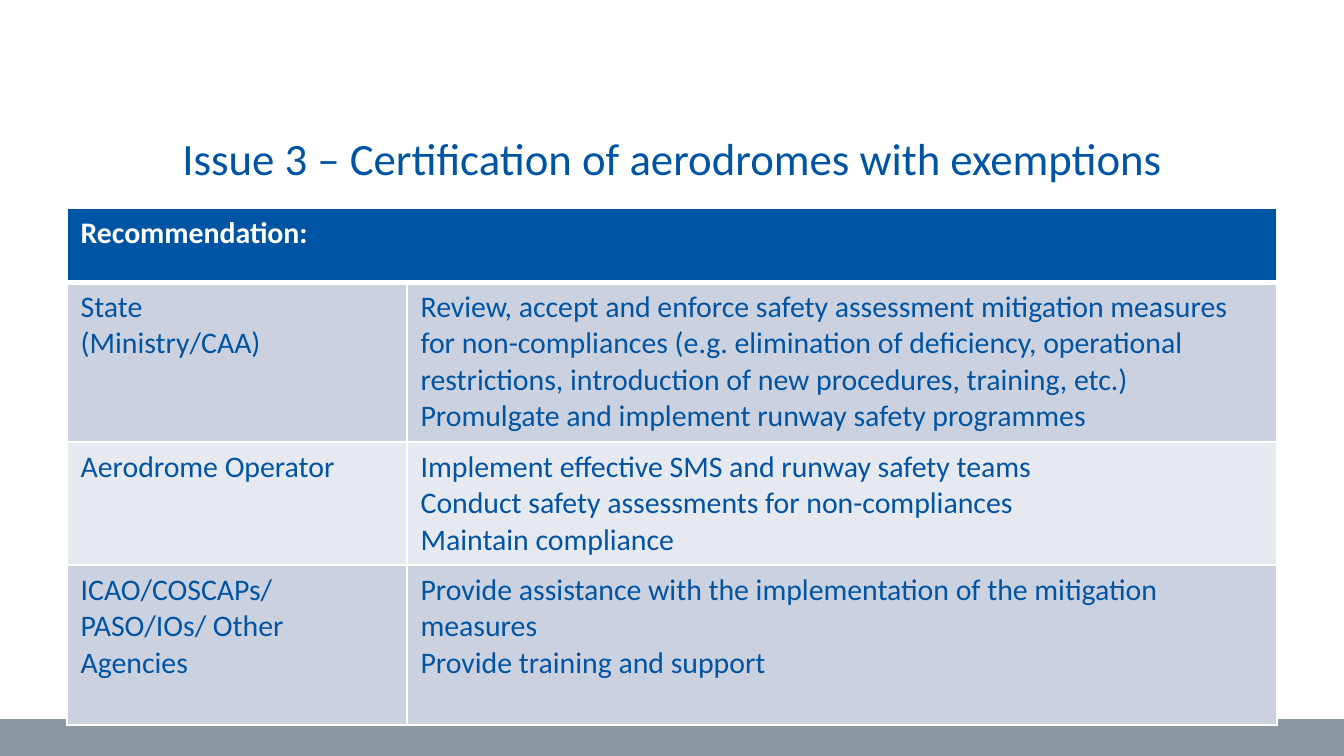
from lxml.etree import SubElement
from pptx import Presentation
from pptx.dml.color import RGBColor
from pptx.enum.shapes import MSO_SHAPE
from pptx.enum.text import MSO_ANCHOR, PP_ALIGN
from pptx.oxml.ns import qn
from pptx.util import Inches, Pt

BLUE = RGBColor(0x00, 0x54, 0xA4)
WHITE = RGBColor(0xFF, 0xFF, 0xFF)
GRAY = RGBColor(0x8C, 0x99, 0xA1)
BANDS = [RGBColor(0xCC, 0xD1, 0xE0), RGBColor(0xE7, 0xE9, 0xF0)]

TITLE = "Issue 3 – Certification of aerodromes with exemptions"
HEADER = "Recommendation:"
RECOMMENDATIONS = [
    (["State", "(Ministry/CAA)"],
     ["Review, accept and enforce safety assessment mitigation measures for "
      "non-compliances (e.g. elimination of deficiency, operational restrictions, "
      "introduction of new procedures, training, etc.)",
      "Promulgate and implement runway safety programmes"]),
    (["Aerodrome Operator"],
     ["Implement effective SMS and runway safety teams",
      "Conduct safety assessments for non-compliances",
      "Maintain compliance"]),
    (["ICAO/COSCAPs/ PASO/IOs/ Other Agencies"],
     ["Provide assistance with the implementation of the mitigation measures",
      "Provide training and support"]),
]
COLUMN_WIDTHS = [2.53, 6.47]
ROW_HEIGHTS = [0.55, 1.19, 0.91, 1.19]
TITLE_FONT = {"name": "Calibri", "size": Pt(24), "bold": False}
HEADER_FONT = {"name": "Calibri", "size": Pt(16), "bold": True}
BODY_FONT = {**HEADER_FONT, "bold": False}


def format_font(font, values, color):
    for name, value in values.items():
        setattr(font, name, value)
    font.color.rgb = color


def add_borders(cell, bottom=1, top=1):
    """Draw white cell borders; widths are in points."""
    properties = cell._tc.get_or_add_tcPr()
    for side, width in {"L": 1, "R": 1, "T": top, "B": bottom}.items():
        line = SubElement(properties, qn(f"a:ln{side}"), w=str(Pt(width)))
        fill = SubElement(line, qn("a:solidFill"))
        SubElement(fill, qn("a:srgbClr"), val=str(WHITE))


def fill_cell(cell, lines, values, color, background):
    cell.fill.solid()
    cell.fill.fore_color.rgb = background
    cell.text = "\n".join(lines)
    for paragraph in cell.text_frame.paragraphs:
        format_font(paragraph.font, values, color)


presentation = Presentation()
presentation.slide_width = Inches(10)
presentation.slide_height = presentation.slide_width * 9 // 16
slide = presentation.slides.add_slide(presentation.slide_layouts[5])

title = slide.shapes.title
title.left, title.top = Inches(0.5), Inches(0.92)
title.width, title.height = Inches(9), Inches(0.47)
frame = title.text_frame
frame.text = TITLE
frame.vertical_anchor = MSO_ANCHOR.TOP
frame.margin_top = Inches(0.05)
frame.paragraphs[0].alignment = PP_ALIGN.CENTER
format_font(frame.paragraphs[0].font, TITLE_FONT, BLUE)

bar_top = Inches(5.35)
footer_bar = slide.shapes.add_shape(
    MSO_SHAPE.RECTANGLE, 0, bar_top,
    presentation.slide_width, presentation.slide_height - bar_top)
footer_bar.shadow.inherit = False
footer_bar.fill.solid()
footer_bar.fill.fore_color.rgb = GRAY
footer_bar.line.fill.background()
title._element.addprevious(footer_bar._element)

table = slide.shapes.add_table(
    len(ROW_HEIGHTS), len(COLUMN_WIDTHS), Inches(0.5), Inches(1.55),
    Inches(sum(COLUMN_WIDTHS)), Inches(sum(ROW_HEIGHTS))).table
for column, width in zip(table.columns, COLUMN_WIDTHS):
    column.width = Inches(width)
for row, height in zip(table.rows, ROW_HEIGHTS):
    row.height = Inches(height)

header = table.cell(0, 0)
header.merge(table.cell(0, 1))
for cell in table.rows[0].cells:
    add_borders(cell, bottom=3)
fill_cell(header, [HEADER], HEADER_FONT, WHITE, BLUE)

for row_index, columns in enumerate(RECOMMENDATIONS, start=1):
    background = BANDS[(row_index - 1) % len(BANDS)]
    for column_index, lines in enumerate(columns):
        cell = table.cell(row_index, column_index)
        add_borders(cell, top=3 if row_index == 1 else 1)
        fill_cell(cell, lines, BODY_FONT, BLUE, background)

presentation.save("out.pptx")
